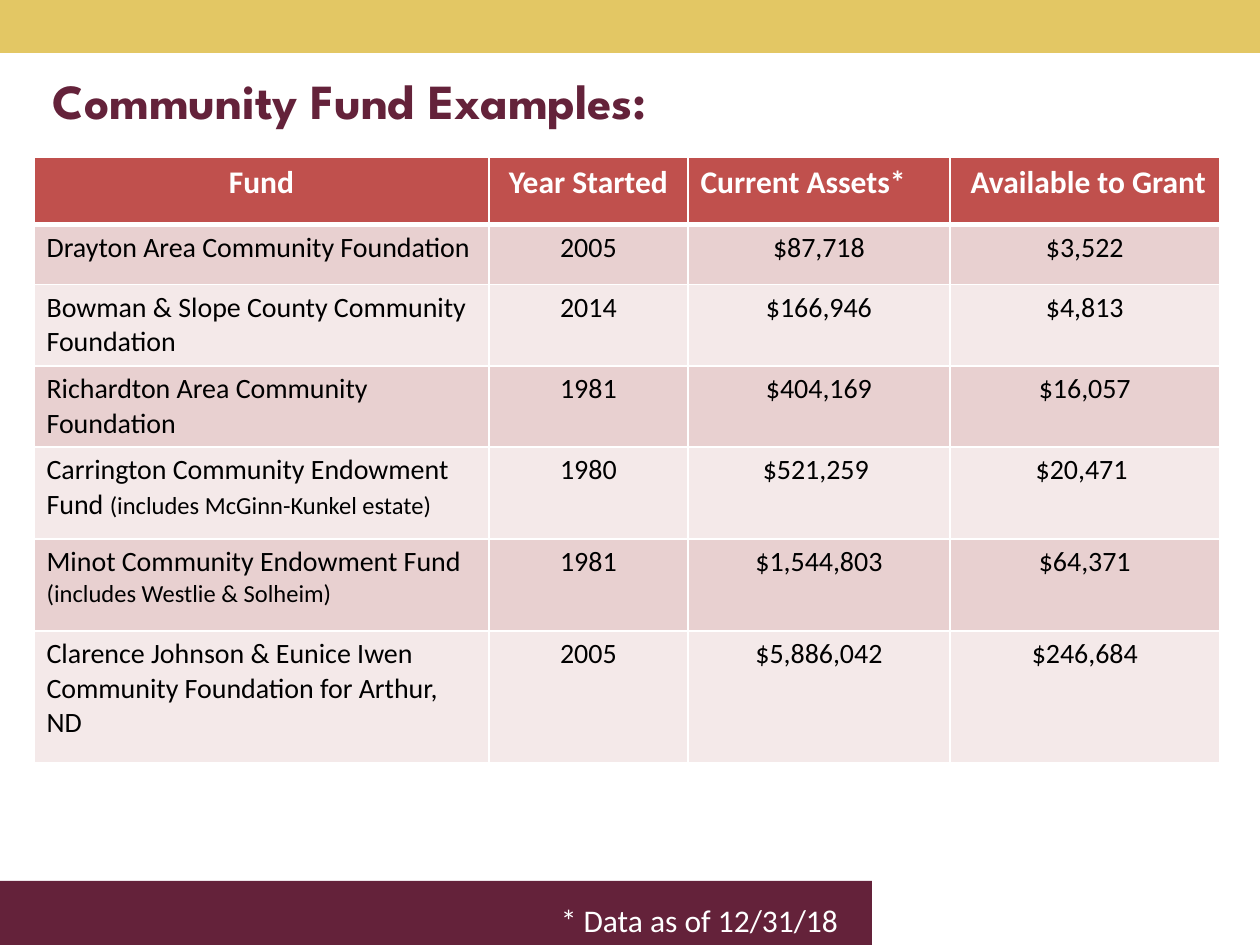
from dataclasses import dataclass

from lxml import etree
from pptx import Presentation
from pptx.dml.color import RGBColor
from pptx.enum.shapes import MSO_SHAPE
from pptx.enum.text import MSO_ANCHOR, MSO_AUTO_SIZE, PP_ALIGN
from pptx.oxml.ns import qn
from pptx.util import Inches, Pt

RECTANGLE = MSO_SHAPE.RECTANGLE
TOP = MSO_ANCHOR.TOP
FIT_SHAPE = MSO_AUTO_SIZE.SHAPE_TO_FIT_TEXT
NO_AUTO_SIZE = MSO_AUTO_SIZE.NONE
LEFT, CENTER, RIGHT = PP_ALIGN.LEFT, PP_ALIGN.CENTER, PP_ALIGN.RIGHT
TITLE_ONLY = 5


@dataclass(frozen=True)
class Theme:
    gold: str = "E3C764"
    maroon: str = "64223A"
    header: str = "C0504D"
    bands: tuple = ("E8D0D0", "F4E9E9")
    white: str = "FFFFFF"
    black: str = "000000"
    title_font: str = "League Spartan"
    body_font: str = "Calibri"
    title_size: int = 28
    header_size: int = 18
    body_size: int = 16
    detail_size: int = 14


THEME = Theme()

COLUMN_WIDTHS = (3.61, 1.58, 2.08, 2.14)
ROW_HEIGHTS = (0.53, 0.48, 0.64, 0.64, 0.73, 0.73, 1.05)
HEADERS = ("Fund", "Year Started", "Current Assets*", " Available to Grant")
HEADER_ALIGNMENTS = (CENTER, CENTER, LEFT, CENTER)
# Fund name, detail in smaller type, year, assets, available to grant
FUNDS = (
    ("Drayton Area Community Foundation", "", "2005", "$87,718", "$3,522"),
    ("Bowman & Slope County Community Foundation", "", "2014", "$166,946", "$4,813"),
    ("Richardton Area Community Foundation", "", "1981", "$404,169", "$16,057"),
    ("Carrington Community Endowment Fund ", "(includes McGinn-Kunkel estate)",
     "1980", "$521,259 ", "$20,471 "),
    ("Minot Community Endowment Fund ", "(includes Westlie & Solheim)",
     "1981", "$1,544,803", "$64,371"),
    ("Clarence Johnson & Eunice Iwen Community Foundation for Arthur, ND", "",
     "2005", "$5,886,042", "$246,684"),
)


def style_paragraph(paragraph, size, color, font=THEME.body_font, bold=False, alignment=LEFT):
    paragraph.alignment = alignment
    paragraph.font.name = font
    paragraph.font.size = Pt(size)
    paragraph.font.bold = bold
    paragraph.font.color.rgb = RGBColor.from_string(color)


def add_band(slide, left, top, width, height, color):
    band = slide.shapes.add_shape(
        RECTANGLE, Inches(left), Inches(top), Inches(width), Inches(height))
    band.shadow.inherit = False
    band.fill.solid()
    band.fill.fore_color.rgb = RGBColor.from_string(color)
    band.line.fill.background()


def set_title(slide, text):
    title = slide.shapes.title
    title.left, title.top = Inches(0.32), Inches(0.51)
    title.width, title.height = Inches(9), Inches(0.83)
    frame = title.text_frame
    frame.text = text
    frame.vertical_anchor = TOP
    frame.auto_size = NO_AUTO_SIZE
    style_paragraph(frame.paragraphs[0], THEME.title_size, THEME.maroon,
                    THEME.title_font, bold=True)


def add_footnote(slide, text):
    box = slide.shapes.add_textbox(Inches(2.5), Inches(7.1), Inches(4.25), Inches(0.4))
    frame = box.text_frame
    frame.word_wrap = True
    frame.auto_size = FIT_SHAPE
    frame.text = text
    style_paragraph(frame.paragraphs[0], THEME.header_size, THEME.white, alignment=RIGHT)


def set_borders(cell, bottom_width=1, top_width=1):
    properties = cell._tc.get_or_add_tcPr()
    widths = {"a:lnL": 1, "a:lnR": 1, "a:lnT": top_width, "a:lnB": bottom_width}
    for tag, width in widths.items():
        line = etree.SubElement(properties, qn(tag), w=str(Pt(width)))
        fill = etree.SubElement(line, qn("a:solidFill"))
        etree.SubElement(fill, qn("a:srgbClr"), val=THEME.white)


def fill_cell(cell, text, fill, **style):
    cell.fill.solid()
    cell.fill.fore_color.rgb = RGBColor.from_string(fill)
    cell.text = text
    style_paragraph(cell.text_frame.paragraphs[0], **style)


def add_fund_table(slide):
    table = slide.shapes.add_table(
        len(ROW_HEIGHTS), len(COLUMN_WIDTHS), Inches(0.27), Inches(1.25),
        Inches(sum(COLUMN_WIDTHS)), Inches(sum(ROW_HEIGHTS))).table
    for column, width in zip(table.columns, COLUMN_WIDTHS):
        column.width = Inches(width)
    for row, height in zip(table.rows, ROW_HEIGHTS):
        row.height = Inches(height)

    for index, (text, alignment) in enumerate(zip(HEADERS, HEADER_ALIGNMENTS)):
        cell = table.cell(0, index)
        set_borders(cell, bottom_width=3)
        fill_cell(cell, text, THEME.header, size=THEME.header_size,
                  color=THEME.white, bold=True, alignment=alignment)

    for row_index, (name, detail, *values) in enumerate(FUNDS, start=1):
        band = THEME.bands[(row_index - 1) % 2]
        for column_index, text in enumerate((name, *values)):
            cell = table.cell(row_index, column_index)
            set_borders(cell, top_width=3 if row_index == 1 else 1)
            fill_cell(cell, text, band, size=THEME.body_size, color=THEME.black,
                      alignment=CENTER if column_index else LEFT)
        if detail:
            run = table.cell(row_index, 0).text_frame.paragraphs[0].add_run()
            run.text = detail
            run.font.size = Pt(THEME.detail_size)


def main():
    presentation = Presentation()
    presentation.slide_width, presentation.slide_height = Inches(10), Inches(7.5)
    slide = presentation.slides.add_slide(presentation.slide_layouts[TITLE_ONLY])
    add_band(slide, 0, 0, 10, 0.42, THEME.gold)
    add_band(slide, 0, 6.99, 6.92, 0.51, THEME.maroon)
    add_fund_table(slide)
    set_title(slide, "Community Fund Examples:")
    add_footnote(slide, "* Data as of 12/31/18")
    presentation.save("out.pptx")


if __name__ == "__main__":
    main()
